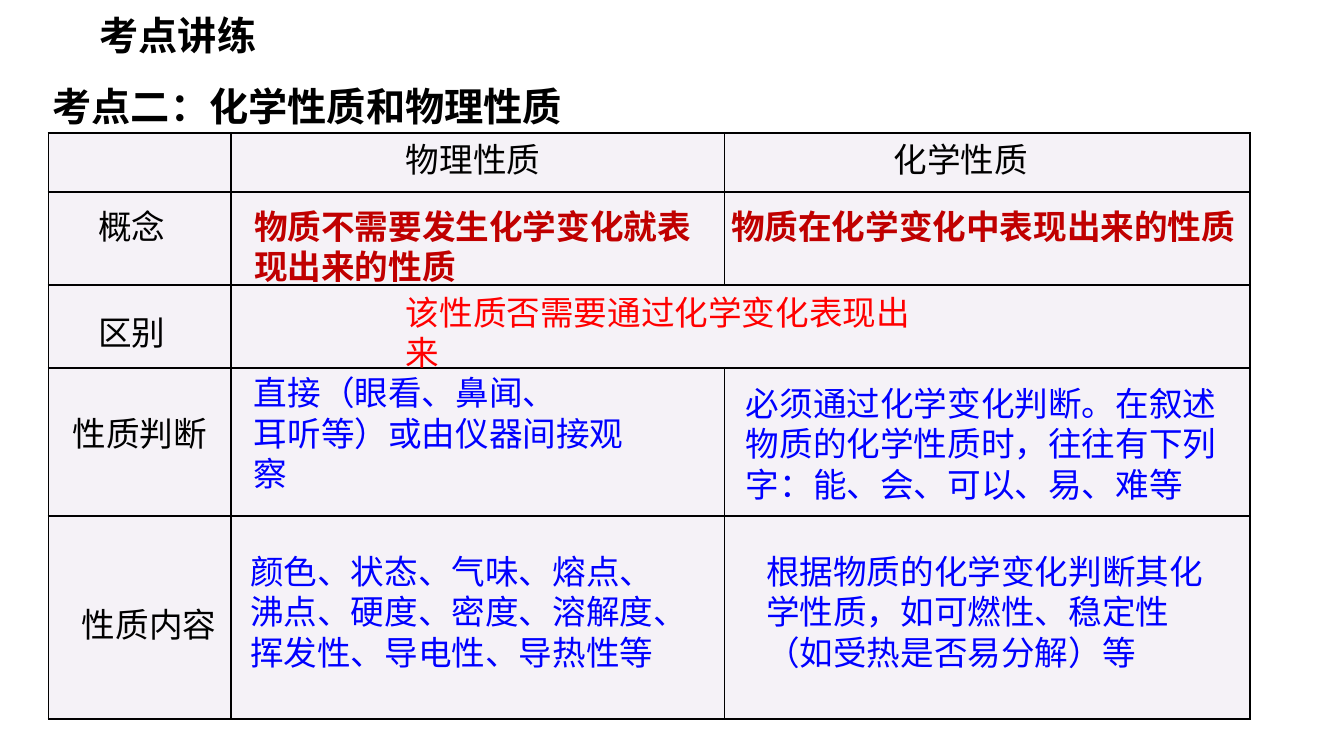
import pptx
import pptx.util
import pptx.dml.color
import pptx.enum.text
import pptx.oxml
import pptx.oxml.ns
import lxml.etree

Inches = pptx.util.Inches
Pt = pptx.util.Pt
RGB = pptx.dml.color.RGBColor.from_string
qn = pptx.oxml.ns.qn
hues = {"black": "000000", "lilac": "E6E0EC", "dark": "C00000", "red": "FF0000", "blue": "0000FF"}
noto = "Noto Sans CJK SC"

deck = pptx.Presentation()
deck.slide_width = Inches(10)
deck.slide_height = Inches(10 * 9 / 16)
slide = deck.slides.add_slide(deck.slide_layouts[6])


def add_text(spot, lines, hue="black", size=18, bold=False):
    box = slide.shapes.add_textbox(*[Inches(n) for n in spot])
    frame = box.text_frame
    frame.word_wrap = True
    frame.auto_size = pptx.enum.text.MSO_AUTO_SIZE.SHAPE_TO_FIT_TEXT
    frame.margin_left = frame.margin_right = Inches(0.07)
    frame.margin_top = frame.margin_bottom = Inches(0.04)
    anchor = pptx.enum.text.MSO_ANCHOR
    frame.vertical_anchor = anchor.TOP if bold else anchor.MIDDLE
    for i, line in enumerate(lines):
        para = frame.add_paragraph() if i else frame.paragraphs[0]
        run = para.add_run()
        run.text = line
        run.font.size = Pt(size)
        run.font.bold = bold
        run.font.name = noto if bold else "Arial"
        run.font.color.rgb = RGB(hues[hue])
        east = lxml.etree.SubElement(run.font._element, qn("a:ea"))
        east.set("typeface", noto)


def style_cell(cell):
    cell.fill.solid()
    cell.fill.fore_color.rgb = RGB(hues["lilac"])
    props = cell._tc.get_or_add_tcPr()
    tint = props.find(".//" + qn("a:srgbClr"))
    lxml.etree.SubElement(tint, qn("a:alpha")).set("val", "39000")
    for i, side in enumerate(["lnL", "lnR", "lnT", "lnB"]):
        edge = lxml.etree.Element(qn("a:" + side), w=str(Pt(1)))
        fill = lxml.etree.SubElement(edge, qn("a:solidFill"))
        lxml.etree.SubElement(fill, qn("a:srgbClr")).set("val", hues["black"])
        props.insert(i, edge)


heads = [
    (0.32, 0.57, 4.42, "考点二：化学性质和物理性质"),
    (0.67, 0.04, 2.2, "考点讲练"),
]
for left, top, wide, text in heads:
    add_text((left, top, wide, 0.43), [text], size=21, bold=True)

cols = [1.36, 3.67, 3.91]
rows = [0.44, 0.69, 0.62, 1.1, 1.51]
grid = slide.shapes.add_table(
    len(rows), len(cols), Inches(0.36), Inches(0.99), Inches(sum(cols)), Inches(sum(rows))
).table
grid.first_row = False
grid.horz_banding = False
for col, wide in zip(grid.columns, cols):
    col.width = Inches(wide)
for row, high in zip(grid.rows, rows):
    row.height = Inches(high)
    for cell in row.cells:
        style_cell(cell)
grid.cell(2, 1).merge(grid.cell(2, 2))

labels = [
    (2.95, 0.99, 1.16, "物理性质"),
    (6.58, 0.99, 1.16, "化学性质"),
    (0.66, 1.49, 0.66, "概念"),
    (0.66, 2.28, 0.66, "区别"),
    (0.47, 3.03, 1.25, "性质判断"),
    (0.54, 4.45, 1.16, "性质内容"),
]
for left, top, wide, text in labels:
    add_text((left, top, wide, 0.38), [text])

add_text((2.95, 2.28, 4.1, 0.38), ["该性质否需要通过化学变化表现出来"], "red")

notes = [
    (1.82, 2.88, 3.1, 0.68, ["直接（眼看、鼻闻、", "耳听等）或由仪器间接观察"]),
    (5.48, 2.81, 3.76, 0.98, ["必须通过化学变化判断。在叙述物质的化学性质时，往往有下列字：能、会、可以、易、难等"]),
    (1.79, 4.06, 3.18, 0.98, ["颜色、状态、气味、熔点、沸点、硬度、密度、溶解度、挥发性、导电性、导热性等"]),
    (5.63, 4.06, 3.42, 0.98, ["根据物质的化学变化判断其化学性质，如可燃性、稳定性（如受热是否易分解）等"]),
]
for *spot, lines in notes:
    add_text(spot, lines, "blue")

add_text((5.37, 1.49, 3.95, 0.38), ["物质在化学变化中表现出来的性质"], "dark", bold=True)
add_text((1.82, 1.49, 3.41, 0.68), ["物质不需要发生化学变化就表现出来的性质"], "dark", bold=True)

deck.save("out.pptx")
